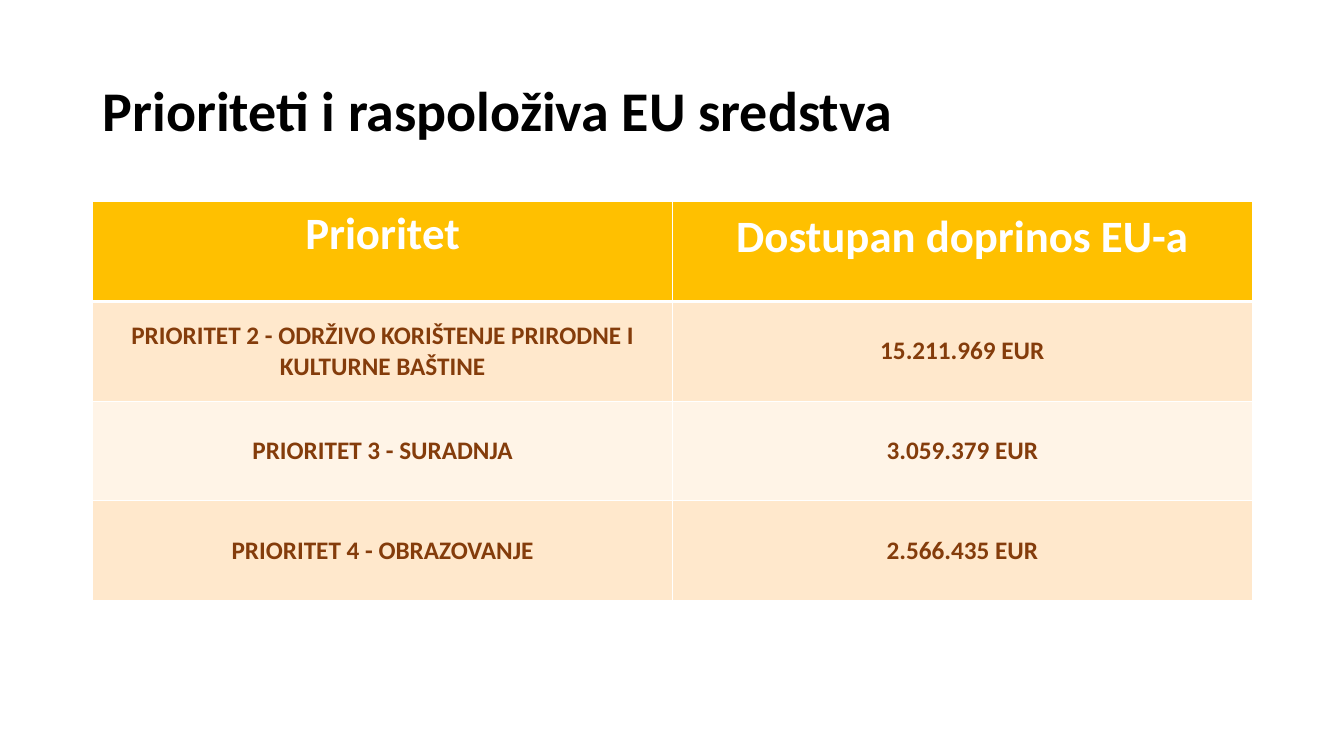
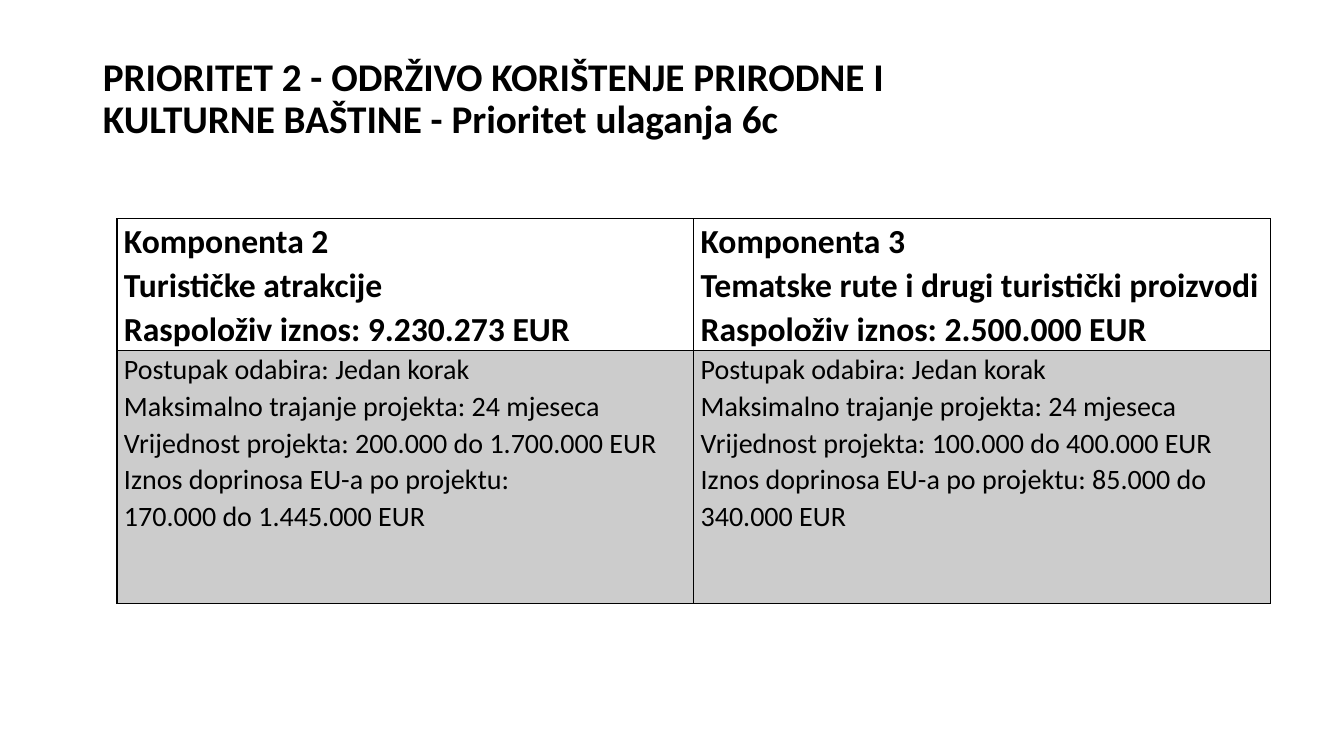
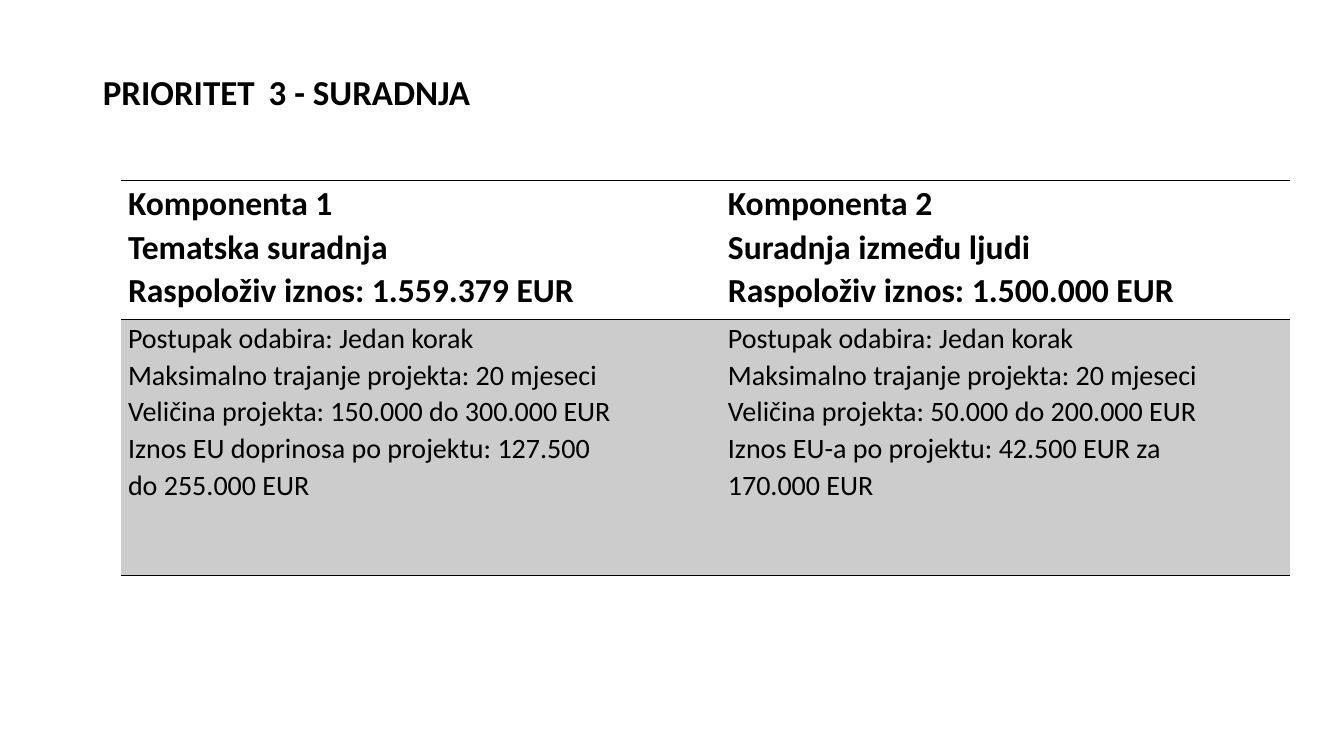
from lxml import etree
from pptx import Presentation
from pptx.dml.color import RGBColor
from pptx.enum import text
from pptx.oxml import ns
from pptx.util import Inches, Pt

# Shared style
FONT = "Calibri"
BLACK = RGBColor(0x00, 0x00, 0x00)
WHITE = RGBColor(0xFF, 0xFF, 0xFF)
GOLD = RGBColor(0xFF, 0xC0, 0x00)
PEACH = RGBColor(0xFF, 0xE8, 0xCC)
CREAM = RGBColor(0xFF, 0xF4, 0xE7)
BROWN = RGBColor(0x84, 0x3C, 0x0B)
GREY = RGBColor(0xCC, 0xCC, 0xCC)
TOP, MIDDLE = text.MSO_ANCHOR.TOP, text.MSO_ANCHOR.MIDDLE
LEFT, CENTER = text.PP_ALIGN.LEFT, text.PP_ALIGN.CENTER

prs = Presentation()
prs.slide_width, prs.slide_height = Inches(13.33), Inches(7.5)


def add_titled_slide(runs, height):
    """Add a slide whose title is a list of (text, size, bold) runs."""
    s = prs.slides.add_slide(prs.slide_layouts[5])
    sp = s.shapes.title
    sp.left, sp.top = Inches(0.92), Inches(0.4)
    sp.width, sp.height = Inches(8.11), Inches(height)
    tf = sp.text_frame
    for name, value in {"word_wrap": True, "vertical_anchor": MIDDLE,
                        "auto_size": text.MSO_AUTO_SIZE.NONE}.items():
        setattr(tf, name, value)
    p = tf.paragraphs[0]
    p.alignment, p.line_spacing = LEFT, 0.9
    for words, size, bold in runs:
        r = p.add_run()
        r.text = words
        r.font.name, r.font.size, r.font.bold = FONT, Pt(size), bold
        r.font.color.rgb = BLACK
    return s


def format_cell(cell, words, size, color, bold, fill, borders,
                align=LEFT, spacing=1.0):
    """Fill one cell; borders maps a side (L, R, T, B) to (colour, points)."""
    tcPr = cell._tc.get_or_add_tcPr()
    for side in "LRTB":
        ln = etree.SubElement(tcPr, ns.qn("a:ln" + side))
        if side in borders:
            line_color, width = borders[side]
            ln.set("w", str(Pt(width)))
            solid = etree.SubElement(ln, ns.qn("a:solidFill"))
            etree.SubElement(solid, ns.qn("a:srgbClr")).set("val", str(line_color))
        else:
            etree.SubElement(ln, ns.qn("a:noFill"))
    if fill is None:
        cell.fill.background()
    else:
        cell.fill.solid()
        cell.fill.fore_color.rgb = fill
    cell.text = words
    for p in cell.text_frame.paragraphs:
        p.alignment, p.line_spacing = align, spacing
        for name, value in {"name": FONT, "size": Pt(size), "bold": bold}.items():
            setattr(p.font, name, value)
        p.font.color.rgb = color


# Slide 1: funds per priority
s = add_titled_slide([("Prioriteti i raspoloživa EU sredstva", 40, True)], 1.45)
rows = [
    ("Prioritet", "Dostupan doprinos EU-a"),
    ("PRIORITET 2 - ODRŽIVO KORIŠTENJE PRIRODNE I KULTURNE BAŠTINE", "15.211.969 EUR"),
    ("PRIORITET 3 - SURADNJA", "3.059.379 EUR"),
    ("PRIORITET 4 - OBRAZOVANJE", "2.566.435 EUR"),
]
table = s.shapes.add_table(4, 2, Inches(0.92), Inches(2),
                           Inches(11.5), Inches(3.96)).table
for i, row in enumerate(rows):
    header = i == 0
    borders = dict.fromkeys("LRTB", (WHITE, 1))
    if header:
        borders["B"] = (WHITE, 3)
    elif i == 1:
        borders["T"] = (WHITE, 3)
    fill = GOLD if header else PEACH if i % 2 else CREAM
    for j, words in enumerate(row):
        cell = table.cell(i, j)
        format_cell(cell, words, 32 if header else 18, WHITE if header else BROWN,
                    True, fill, borders, CENTER)
        cell.vertical_anchor = TOP if header else MIDDLE
table.cell(0, 1).margin_top = Inches(0.08)

# Slides 2 and 3: components of a priority, amounts above, conditions below
grid = dict.fromkeys("LRTB", (BLACK, 1))
rules = dict.fromkeys("TB", (BLACK, 1))
components = [
    dict(
        title=[("PRIORITET 2 - ODRŽIVO KORIŠTENJE PRIRODNE I KULTURNE BAŠTINE"
                " - Prioritet ulaganja 6c", 28, True)],
        title_height=1.18, left=1.16, top=2.17,
        widths=(5.72, 5.72), heights=(1.31, 2.51), borders=grid,
        cells=[
            ("Komponenta 2\nTurističke atrakcije\nRaspoloživ iznos: 9.230.273 EUR",
             "Komponenta 3\nTematske rute i drugi turistički proizvodi\n"
             "Raspoloživ iznos: 2.500.000 EUR"),
            ("Postupak odabira: Jedan korak\n"
             "Maksimalno trajanje projekta: 24 mjeseca\n"
             "Vrijednost projekta: 200.000 do 1.700.000 EUR\n"
             "Iznos doprinosa EU-a po projektu:\n170.000 do 1.445.000 EUR",
             "Postupak odabira: Jedan korak\n"
             "Maksimalno trajanje projekta: 24 mjeseca\n"
             "Vrijednost projekta: 100.000 do 400.000 EUR\n"
             "Iznos doprinosa EU-a po projektu: 85.000 do 340.000 EUR"),
        ]),
    dict(
        title=[("PRIORITET", 25, True), (" ", 44, False), ("3 - SURADNJA", 25, True)],
        title_height=0.89, left=1.2, top=1.79,
        widths=(5.95, 5.64), heights=(1.38, 2.54), borders=rules,
        cells=[
            ("Komponenta 1\nTematska suradnja\nRaspoloživ iznos: 1.559.379 EUR",
             "Komponenta 2\nSuradnja između ljudi\nRaspoloživ iznos: 1.500.000 EUR"),
            ("Postupak odabira: Jedan korak\n"
             "Maksimalno trajanje projekta: 20 mjeseci\n"
             "Veličina projekta: 150.000 do 300.000 EUR\n"
             "Iznos EU doprinosa po projektu: 127.500\ndo 255.000 EUR",
             "Postupak odabira: Jedan korak\n"
             "Maksimalno trajanje projekta: 20 mjeseci\n"
             "Veličina projekta: 50.000 do 200.000 EUR\n"
             "Iznos EU-a po projektu: 42.500 EUR za\n170.000 EUR"),
        ]),
]
for c in components:
    s = add_titled_slide(c["title"], c["title_height"])
    table = s.shapes.add_table(2, 2, Inches(c["left"]), Inches(c["top"]),
                               Inches(sum(c["widths"])), Inches(sum(c["heights"]))).table
    table.first_row = table.horz_banding = False
    for i, height in enumerate(c["heights"]):
        table.rows[i].height = Inches(height)
        for j, width in enumerate(c["widths"]):
            table.columns[j].width = Inches(width)
            cell = table.cell(i, j)
            format_cell(cell, c["cells"][i][j], 20 if i else 24, BLACK, i == 0,
                        GREY if i else None, c["borders"], spacing=1.07)
            cell.margin_left = cell.margin_right = Inches(0.07)
            cell.margin_top = cell.margin_bottom = 0

prs.save("out.pptx")
